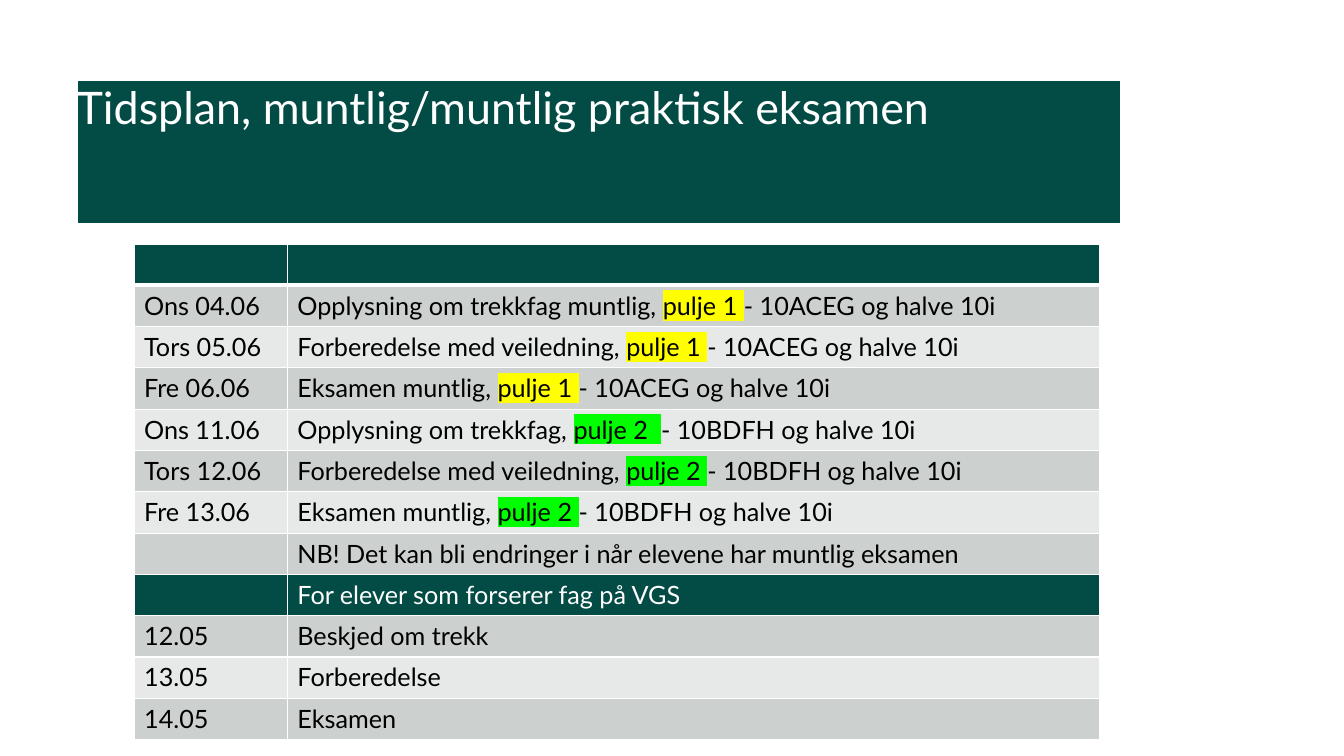
import pptx
import pptx.dml.color
import pptx.enum.text
import pptx.oxml
import pptx.oxml.ns
import pptx.util

GREEN, GREY, PALE = "034B45", "CCD0CF", "E7E9E9"
WHITE, BLACK = "FFFFFF", "000000"
YELLOW, LIME = "FFFF00", "00FF00"

POOL_1 = (("pulje 1 ", YELLOW), "- 10ACEG og halve 10i")
POOL_2 = (("pulje 2 ", LIME), "- 10BDFH og halve 10i")

# Each row holds a date and the spans of its description; a pair is highlighted text.
SCHEDULE = [
    ("", []),
    ("Ons 04.06", ["Opplysning om trekkfag muntlig, ", *POOL_1]),
    ("Tors 05.06", ["Forberedelse med veiledning, ", *POOL_1]),
    ("Fre 06.06", ["Eksamen muntlig, ", *POOL_1]),
    ("Ons 11.06", ["Opplysning om trekkfag, ", ("pulje 2  ", LIME), POOL_2[1]]),
    ("Tors 12.06", ["Forberedelse med veiledning, ", *POOL_2]),
    ("Fre 13.06", ["Eksamen muntlig, ", *POOL_2]),
    ("", ["NB! Det kan bli endringer i når elevene har muntlig eksamen"]),
    ("", ["For elever som forserer fag på VGS"]),
    ("12.05", ["Beskjed om trekk"]),
    ("13.05", ["Forberedelse"]),
    ("14.05", ["Eksamen"]),
]
HEADING_ROWS = (0, 8)


def px(length):
    """Turn px, at 100 to the inch, into EMU."""
    return pptx.util.Emu(length * 9144)


def colour(code):
    return pptx.dml.color.RGBColor.from_string(code)


def add_xml(parent, markup):
    namespace = pptx.oxml.ns.nsdecls("a")
    parent.append(pptx.oxml.parse_xml(markup.replace(" ", f" {namespace} ", 1)))


def write(para, text, size=18, ink=BLACK, highlight=None, font="Lato"):
    span = para.add_run()
    span.text = text
    span.font.size = pptx.util.Pt(size)
    span.font.color.rgb = colour(ink)
    if highlight:
        add_xml(span.font._element,
                f'<a:highlight ><a:srgbClr val="{highlight}"/></a:highlight>')
    span.font.name = font


def draw_borders(cell, top=1, bottom=1):
    """Draw white cell borders, with widths in points."""
    properties = cell._tc.get_or_add_tcPr()
    for side, width in (("L", 1), ("R", 1), ("T", top), ("B", bottom)):
        add_xml(properties,
                f'<a:ln{side} w="{pptx.util.Pt(width)}"><a:solidFill>'
                f'<a:srgbClr val="{WHITE}"/></a:solidFill></a:ln{side}>')


class SlideBuilder:
    def __init__(self, deck):
        self.page = deck.slides.add_slide(deck.slide_layouts[5])

    def title(self, text, left, top, width, height):
        box = self.page.shapes.title
        box.left, box.top, box.width, box.height = map(px, (left, top, width, height))
        box.fill.solid()
        box.fill.fore_color.rgb = colour(GREEN)
        box.line.color.rgb = colour(WHITE)
        box.line.width = pptx.util.Pt(1.5)
        frame = box.text_frame
        frame.margin_left = frame.margin_right = 0
        frame.margin_top = frame.margin_bottom = 0
        frame.word_wrap = True
        frame.auto_size = pptx.enum.text.MSO_AUTO_SIZE.NONE
        frame.vertical_anchor = pptx.enum.text.MSO_ANCHOR.TOP
        para = frame.paragraphs[0]
        para.alignment = pptx.enum.text.PP_ALIGN.LEFT
        write(para, text, size=32, ink=WHITE)

    def schedule(self, rows, left, top, widths, row_height):
        table = self.page.shapes.add_table(
            len(rows), len(widths), px(left), px(top),
            px(sum(widths)), px(row_height * len(rows))).table
        for column, width in zip(table.columns, widths):
            column.width = px(width)
        for index, (date, spans) in enumerate(rows):
            heading = index in HEADING_ROWS
            fill = GREEN if heading else GREY if index % 2 else PALE
            ink = WHITE if heading else BLACK
            for cell, parts in zip(table.rows[index].cells, ([date], spans)):
                draw_borders(cell, top=3 if index == 1 else 1,
                             bottom=3 if index == 0 else 1)
                cell.fill.solid()
                cell.fill.fore_color.rgb = colour(fill)
                para = cell.text_frame.paragraphs[0]
                for part in filter(None, parts):
                    text, highlight = (part, None) if isinstance(part, str) else part
                    write(para, text, ink=ink, highlight=highlight)


def main():
    deck = pptx.Presentation()
    deck.slide_width, deck.slide_height = px(1333), px(750)
    builder = SlideBuilder(deck)
    builder.title("Tidsplan, muntlig/muntlig praktisk eksamen", 76, 79, 1036, 143)
    builder.schedule(SCHEDULE, 133, 242, widths=(152, 806), row_height=41)
    deck.save("out.pptx")


if __name__ == "__main__":
    main()
